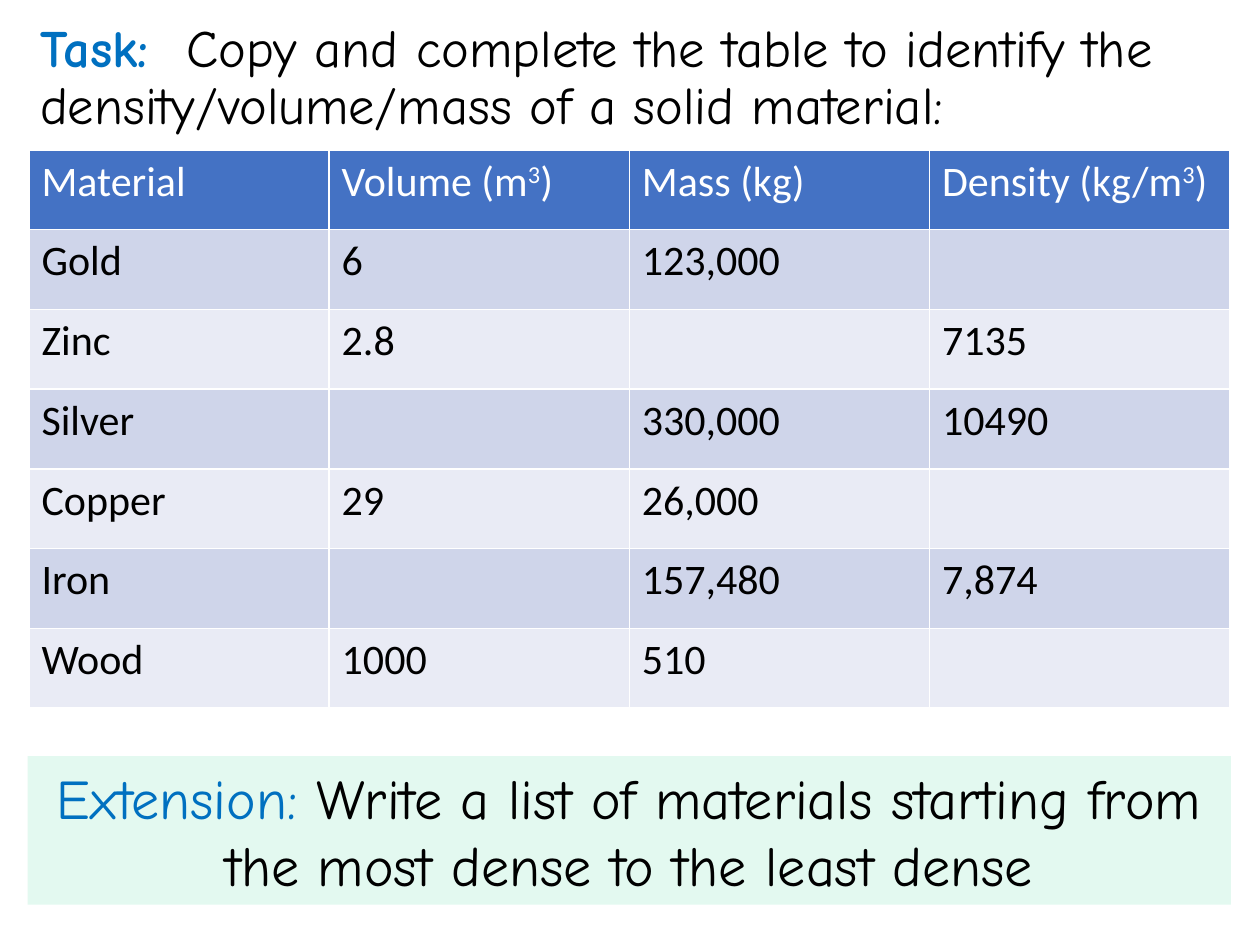
import pptx
import pptx.util
import pptx.dml.color
import pptx.enum.shapes
import pptx.enum.text
import pptx.oxml.ns
from lxml import etree

Inches = pptx.util.Inches
Pt = pptx.util.Pt
RGBColor = pptx.dml.color.RGBColor

BLACK = RGBColor(0x00, 0x00, 0x00)
WHITE = RGBColor(0xFF, 0xFF, 0xFF)
BLUE = RGBColor(0x00, 0x70, 0xC0)
HEADER_FILL = RGBColor(0x44, 0x72, 0xC4)
BAND_FILLS = (RGBColor(0xCF, 0xD5, 0xEA), RGBColor(0xE9, 0xEB, 0xF5))
MINT = RGBColor(0xE3, 0xF9, 0xF0)

HEADERS = ["Material", "Volume (m^3^)", "Mass (kg)", "Density (kg/m^3^)"]
MATERIALS = [
    ["Gold", "6", "123,000", ""],
    ["Zinc", "2.8", "", "7135"],
    ["Silver", "", "330,000", "10490"],
    ["Copper", "29", "26,000", ""],
    ["Iron", "", "157,480", "7,874"],
    ["Wood", "1000", "510", ""],
]


def add_run(p, text, font, size, color, bold=False):
    r = p.add_run()
    r.text = text
    r.font.name = font
    r.font.size = Pt(size)
    r.font.color.rgb = color
    r.font.bold = bold
    return r


def add_tab_stop(p, position):
    qn = pptx.oxml.ns.qn
    tabs = etree.SubElement(p._p.get_or_add_pPr(), qn("a:tabLst"))
    etree.SubElement(tabs, qn("a:tab"), pos=str(position), algn="l")


def add_task(slide):
    box = slide.shapes.add_textbox(Inches(0.22), Inches(0.13), Inches(9.61), Inches(1.06))
    box.text_frame.word_wrap = True
    p = box.text_frame.paragraphs[0]
    add_tab_stop(p, Inches(1.16))
    p.line_spacing = 0.9
    add_run(p, "Task:\t", "Comic Neue", 30, BLUE, bold=True)
    add_run(p, "Copy and complete the table to identify the "
               "density/volume/mass of a solid material:", "Comic Neue", 30, BLACK)


def fill_cell(cell, text, fill, color):
    """Write one cell; text between ^ marks is superscript."""
    cell.fill.solid()
    cell.fill.fore_color.rgb = fill
    p = cell.text_frame.paragraphs[0]
    p.font.size = Pt(24)
    for i, part in enumerate(text.split("^")):
        if part:
            r = add_run(p, part, "Calibri", 24, color)
            if i % 2:
                r.font._element.set("baseline", "30000")


def add_materials_table(slide):
    rows = [HEADERS] + MATERIALS
    table = slide.shapes.add_table(len(rows), len(HEADERS), Inches(0.23), Inches(1.19),
                                   Inches(9.53), Inches(4.43)).table
    for i, values in enumerate(rows):
        fill = BAND_FILLS[(i - 1) % 2] if i else HEADER_FILL
        for j, text in enumerate(values):
            fill_cell(table.cell(i, j), text, fill, BLACK if i else WHITE)


def add_extension(slide):
    s = slide.shapes.add_shape(pptx.enum.shapes.MSO_SHAPE.RECTANGLE,
                               Inches(0.22), Inches(6), Inches(9.55), Inches(1.18))
    s.shadow.inherit = False
    s.fill.solid()
    s.fill.fore_color.rgb = MINT
    s.line.fill.background()
    s.text_frame.word_wrap = True
    p = s.text_frame.paragraphs[0]
    p.alignment = pptx.enum.text.PP_ALIGN.CENTER
    add_run(p, "Extension: ", "Comic Neue", 32, BLUE)
    add_run(p, "Write a list of materials starting from the most dense "
               "to the least dense", "Comic Neue", 32, BLACK)


def main():
    prs = pptx.Presentation()
    prs.slide_width, prs.slide_height = Inches(10), Inches(7.5)
    slide = prs.slides.add_slide(prs.slide_layouts[6])
    # Task, table, then extension question
    add_task(slide)
    add_materials_table(slide)
    add_extension(slide)
    prs.save("out.pptx")


if __name__ == "__main__":
    main()
